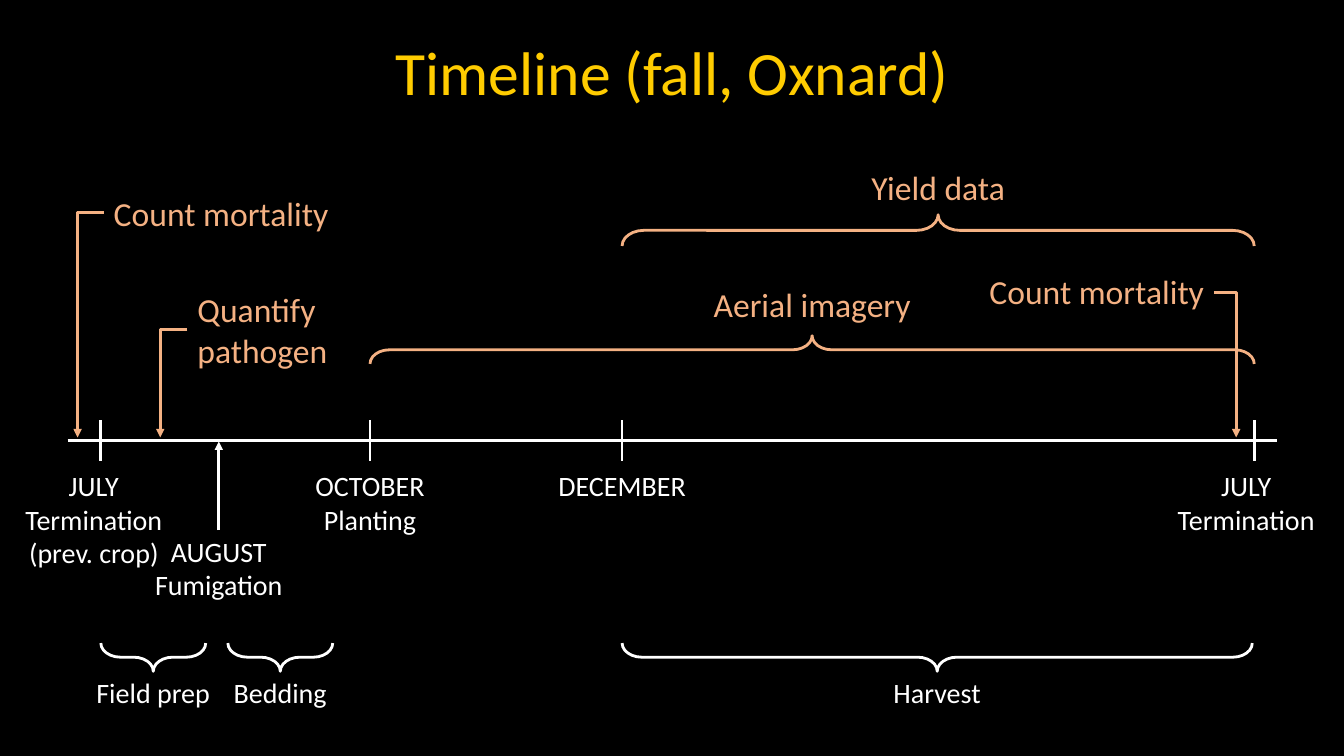
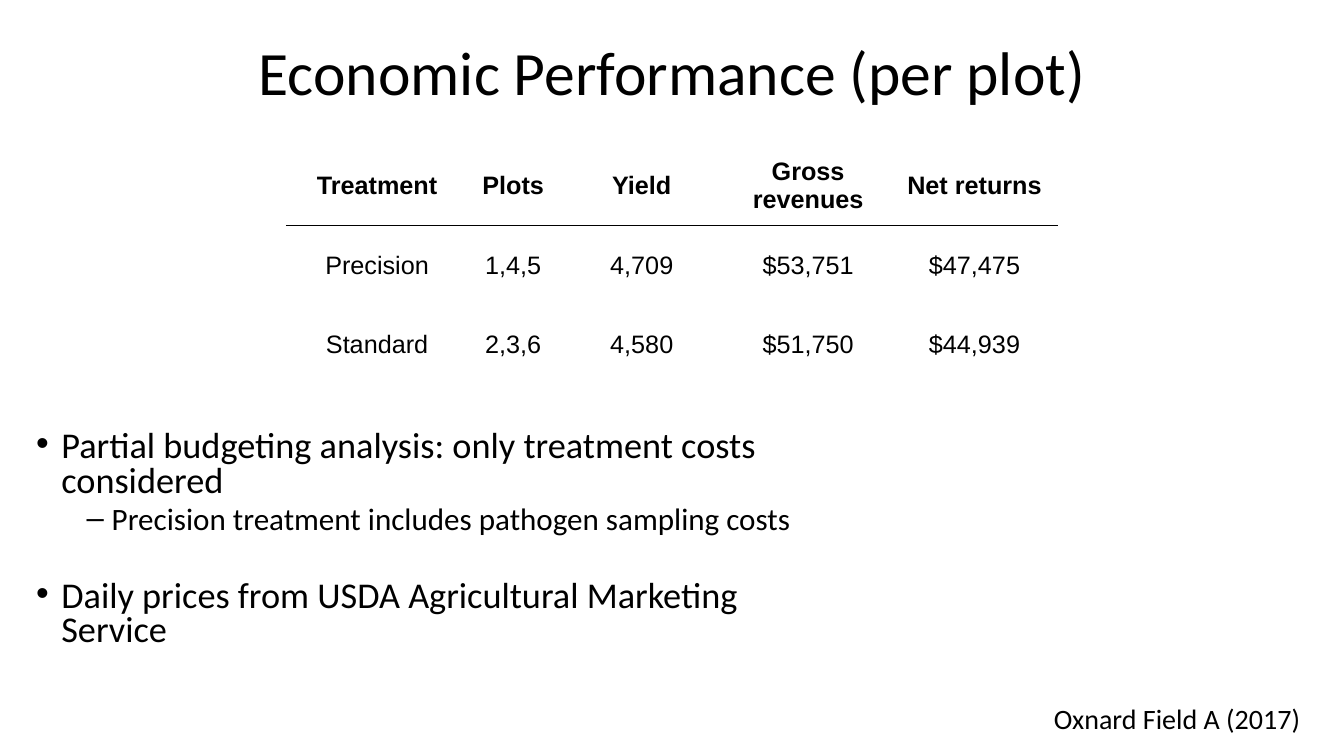
from lxml.etree import SubElement
from pptx import Presentation
from pptx.dml.color import RGBColor
from pptx.enum.shapes import MSO_CONNECTOR, MSO_SHAPE
from pptx.enum.text import MSO_ANCHOR, PP_ALIGN
from pptx.oxml.ns import qn
from pptx.util import Inches, Pt

COLORS = {"black": "000000", "white": "FFFFFF", "gold": "FFCC00", "peach": "F4B183"}
LEFT, CENTER, RIGHT = PP_ALIGN.LEFT, PP_ALIGN.CENTER, PP_ALIGN.RIGHT

AXIS_Y = 4.37
TICK_HALF = 0.2
BRACE_CURVE = 0.693
ARROW_END_Y = 4.34
PERIOD_LABEL_TOP = 6.65
BRACE_TOP = 6.38

JULY_START, OCTOBER, DECEMBER, JULY_END = TICKS = (1, 3.67, 6.17, 12.44)

MILESTONES = [
    (["JULY", "Termination (prev. crop)"], 0.93, 4.6, 1.62),
    (["OCTOBER", "Planting"], OCTOBER, 4.6, 1.5),
    (["DECEMBER"], DECEMBER, 4.6, 1.72),
    (["JULY", "Termination"], 12.36, 4.6, 1.6),
    (["AUGUST", "Fumigation"], 2.17, 5.25, 1.5),
]
FIELD_PERIODS = [
    ("Field prep", JULY_START, 2.04),
    ("Bedding", 2.26, 3.3),
    ("Harvest", DECEMBER, 12.42),
]
DATA_PERIODS = [
    ("Aerial imagery", OCTOBER, JULY_END, 3.33, 0.28, 2.77),
    ("Yield data", DECEMBER, JULY_END, 2.13, 0.31, 1.61),
]
SAMPLINGS = [
    ("Count mortality", 1.03, 1.86, 2.64, LEFT, (1.03, 2.11), 0.77),
    ("Quantify pathogen", 1.86, 2.82, 2.55, LEFT, (1.86, 3.27), 1.59),
    ("Count mortality", 9.4, 2.64, 2.64, RIGHT, (12.04, 2.9), 12.26),
]

RETURNS = [
    ("Treatment", "Plots", "Yield", "Gross revenues", "Net returns"),
    ("Precision", "1,4,5", "4,709", "$53,751", "$47,475"),
    ("Standard", "2,3,6", "4,580", "$51,750", "$44,939"),
]
COLUMN_WIDTHS = (1.8, 0.9, 1.65, 1.65, 1.65)
ROW_HEIGHT = 0.79
BULLETS = [
    ("Partial budgeting analysis: only treatment costs considered", "•", 25.9, 0.25, 10),
    ("Precision treatment includes pathogen sampling costs", "‒", 22.2, 0.75, 5),
    ("Daily prices from USDA Agricultural Marketing Service", "•", 25.9, 0.25, 31),
]


def rgb(color):
    return RGBColor.from_string(COLORS[color])


def write(paragraph, text, size, color, font="Calibri", bold=False, **layout):
    run = paragraph.add_run()
    run.text = text
    for name, value in {"name": font, "size": Pt(size), "bold": bold}.items():
        setattr(run.font, name, value)
    run.font.color.rgb = rgb(color)
    for name, value in layout.items():
        setattr(paragraph, name, value)


def add_frame(slide, left, top, width, height, anchor=MSO_ANCHOR.TOP):
    box = slide.shapes.add_textbox(Inches(left), Inches(top), Inches(width), Inches(height))
    for name, value in {"word_wrap": True, "vertical_anchor": anchor}.items():
        setattr(box.text_frame, name, value)
    return box.text_frame


def next_paragraph(frame, index):
    return frame.add_paragraph() if index else frame.paragraphs[0]


def add_label(slide, lines, left, top, width, size, color, alignment=CENTER):
    frame = add_frame(slide, left, top, width, 0.1 + len(lines) * size / 60)
    for index, line in enumerate(lines):
        write(next_paragraph(frame, index), line, size, color, alignment=alignment)


def add_line(slide, start, end, color, width=2, arrow=False, bent=False):
    kind = MSO_CONNECTOR.ELBOW if bent else MSO_CONNECTOR.STRAIGHT
    line = slide.shapes.add_connector(kind, *(Inches(value) for value in (*start, *end)))
    line.line.color.rgb = rgb(color)
    line.line.width = Pt(width)
    properties = line._element.spPr
    if bent:
        properties.find(qn("a:prstGeom")).set("prst", "bentConnector2")
    if arrow:
        SubElement(line.line._get_or_add_ln(), qn("a:tailEnd"), type="triangle")
    SubElement(properties, qn("a:effectLst"))


def add_brace(slide, start, end, top, depth, rotation, color):
    span = end - start
    left = (start + end - depth) / 2
    brace = slide.shapes.add_shape(
        MSO_SHAPE.RIGHT_BRACE, Inches(left), Inches(top + (depth - span) / 2),
        Inches(depth), Inches(span))
    brace.rotation = rotation
    brace.adjustments[0] = BRACE_CURVE
    brace.shadow.inherit = False
    brace.fill.background()
    brace.line.color.rgb = rgb(color)
    brace.line.width = Pt(2)


def add_titled_slide(presentation, title, background, color):
    slide = presentation.slides.add_slide(presentation.slide_layouts[6])
    slide.background.fill.solid()
    slide.background.fill.fore_color.rgb = rgb(background)
    frame = add_frame(slide, 0.92, 0.25, 11.5, 1, MSO_ANCHOR.MIDDLE)
    write(frame.paragraphs[0], title, 44, color, alignment=CENTER, line_spacing=0.9)
    return slide


def set_borders(cell, colors):
    properties = cell._tc.get_or_add_tcPr()
    for position, (side, color) in enumerate(colors.items()):
        border = SubElement(properties, qn(f"a:ln{side}"), w=str(Pt(1)))
        fill = SubElement(border, qn("a:solidFill"))
        SubElement(fill, qn("a:srgbClr"), val=COLORS[color])
        properties.insert(position, border)


def add_returns_table(slide):
    table = slide.shapes.add_table(
        len(RETURNS), len(COLUMN_WIDTHS), Inches(2.84), Inches(1.45),
        Inches(sum(COLUMN_WIDTHS)), Inches(ROW_HEIGHT * len(RETURNS))).table
    table.first_row = table.horz_banding = False
    for column, width in zip(table.columns, COLUMN_WIDTHS):
        column.width = Inches(width)
    cell_format = {
        "vertical_anchor": MSO_ANCHOR.MIDDLE,
        "margin_left": Inches(0.07), "margin_right": Inches(0.07),
        "margin_top": 0, "margin_bottom": 0,
    }
    for row, values in enumerate(RETURNS):
        table.rows[row].height = Inches(ROW_HEIGHT)
        borders = {
            "L": "white", "R": "white",
            "T": "black" if row == 1 else "white",
            "B": "black" if row == 0 else "white",
        }
        for column, value in enumerate(values):
            cell = table.cell(row, column)
            for name, setting in cell_format.items():
                setattr(cell, name, setting)
            cell.fill.background()
            set_borders(cell, borders)
            write(cell.text_frame.paragraphs[0], value, 18, "black", "Arial", row == 0,
                  alignment=CENTER)


def add_bullets(slide):
    frame = add_frame(slide, 0.26, 4.22, 8.19, 2.37)
    for index, (text, mark, size, indent, space) in enumerate(BULLETS):
        paragraph = next_paragraph(frame, index)
        write(paragraph, text, size, "black", line_spacing=0.8, space_before=Pt(space))
        properties = paragraph._p.get_or_add_pPr()
        properties.set("marL", str(Inches(indent)))
        properties.set("indent", str(Inches(-0.25)))
        SubElement(properties, qn("a:buFont"), typeface="Arial")
        SubElement(properties, qn("a:buChar"), char=mark)


def build_timeline(presentation):
    slide = add_titled_slide(presentation, "Timeline (fall, Oxnard)", "black", "gold")
    add_line(slide, (0.67, AXIS_Y), (12.67, AXIS_Y), "white", 2.25)
    for x in TICKS:
        add_line(slide, (x, AXIS_Y - TICK_HALF), (x, AXIS_Y + TICK_HALF), "white")
    for lines, center, top, width in MILESTONES:
        add_label(slide, lines, center - width / 2, top, width, 20, "white")
    add_line(slide, (2.17, 5.26), (2.17, 4.38), "white", arrow=True)
    for name, start, end in FIELD_PERIODS:
        add_brace(slide, start, end, BRACE_TOP, 0.28, 90, "white")
        add_label(slide, [name], (start + end - 1.5) / 2, PERIOD_LABEL_TOP, 1.5, 20, "white")
    for name, start, end, top, depth, label_top in DATA_PERIODS:
        add_brace(slide, start, end, top, depth, 270, "peach")
        add_label(slide, [name], (start + end - 2.64) / 2, label_top, 2.64, 24, "peach")
    for name, left, top, width, alignment, start, arrow_x in SAMPLINGS:
        add_label(slide, [name], left, top, width, 24, "peach", alignment)
        add_line(slide, start, (arrow_x, ARROW_END_Y), "peach", arrow=True, bent=True)


def build_economics(presentation):
    slide = add_titled_slide(presentation, "Economic Performance (per plot)", "white", "black")
    add_returns_table(slide)
    add_label(slide, ["Oxnard Field A (2017)"], 10.21, 6.91, 2.93, 20, "black")
    add_bullets(slide)


def main():
    presentation = Presentation()
    presentation.slide_width = Inches(13.33)
    presentation.slide_height = Inches(7.5)
    build_timeline(presentation)
    build_economics(presentation)
    presentation.save("out.pptx")


if __name__ == "__main__":
    main()
